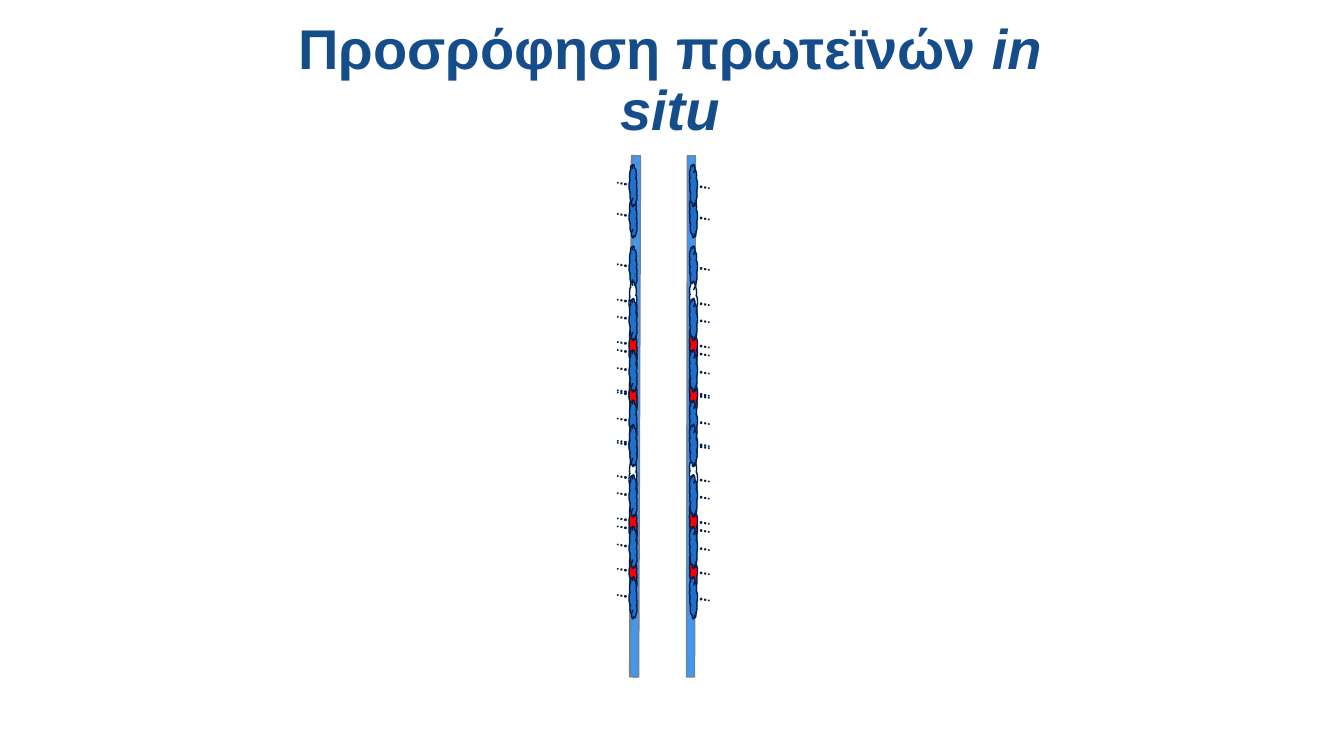
"""Build the slide on protein adsorption in situ."""
from pptx import Presentation
from pptx.dml.color import RGBColor
from pptx.enum.shapes import MSO_SHAPE
from pptx.enum.text import MSO_ANCHOR, MSO_AUTO_SIZE, PP_ALIGN
from pptx.util import Pt

RECTANGLE = MSO_SHAPE.RECTANGLE
CLOUD = MSO_SHAPE.CLOUD_CALLOUT
MIDDLE = MSO_ANCHOR.MIDDLE
NO_AUTOFIT = MSO_AUTO_SIZE.NONE
CENTER = PP_ALIGN.CENTER

COLORS = {
    "title": "154C8A",
    "membrane": "4397EE",
    "membrane_line": "748394",
    "protein_line": "001F46",
    "blue": "2170CC",
    "white": "FFFFFF",
    "red": "FF0000",
}
THICKNESS = 5.76
MEMBRANE_LENGTH, MEMBRANE_TOP = 372.24, 294.48
PROTEIN_LENGTH = 30.24
TAIL = (-0.062, 1.896)
PROTEINS = [
    ("blue", (277.92, 313.92, 187.92, 151.92)),
    ("white", (339.12, 375.12, 249.12, 213.12)),
    ("red", (369.36, 405.36, 279.36, 243.36)),
    ("blue", (388.08, 424.08, 298.08, 262.08)),
    ("blue", (129.6, 315.36, 351.36, 225.36)),
]
WALLS = [
    {"turn": 270.1, "membranes": (307.44,), "proteins": 480.24},
    {"turn": 90.2, "membranes": (267.12, 267.84), "proteins": 437.04},
]


class SlideBuilder:
    """Hold the style and the current slide."""

    def __init__(self, deck, font="Arial"):
        """Add a slide with a title to the deck."""
        self.slide = deck.slides.add_slide(deck.slide_layouts[5])
        self.font = font

    def title(self, left, top, width, height, spans, size):
        """Place the title from pairs of wording and italic flag."""
        box = self.slide.shapes.title
        box.left, box.top, box.width, box.height = map(Pt, (left, top, width, height))
        frame = box.text_frame
        frame.word_wrap = True
        frame.auto_size = NO_AUTOFIT
        frame.vertical_anchor = MIDDLE
        para = frame.paragraphs[0]
        para.alignment = CENTER
        para.line_spacing = 0.9
        para.space_before = Pt(0)
        for wording, italic in spans:
            span = para.add_run()
            span.text = wording
            span.font.name = self.font
            span.font.size = Pt(size)
            span.font.bold = True
            span.font.italic = italic
            span.font.color.rgb = RGBColor.from_string(COLORS["title"])

    def strip(self, group, kind, left, top, length, turn, fill, line):
        """Add one thin turned shape to a group."""
        shape = group.shapes.add_shape(kind, Pt(left), Pt(top), Pt(length), Pt(THICKNESS))
        shape.rotation = turn
        shape.shadow.inherit = False
        shape.fill.solid()
        shape.fill.fore_color.rgb = RGBColor.from_string(COLORS[fill])
        shape.line.color.rgb = RGBColor.from_string(COLORS[line])
        shape.line.width = Pt(1)
        return shape

    def wall(self, turn, membranes, proteins):
        """Add a membrane wall with its adsorbed proteins."""
        group = self.slide.shapes.add_group_shape()
        for left in membranes:
            self.strip(group, RECTANGLE, left, MEMBRANE_TOP, MEMBRANE_LENGTH,
                       turn, "membrane", "membrane_line")
        for fill, tops in PROTEINS:
            for top in tops:
                cloud = self.strip(group, CLOUD, proteins, top, PROTEIN_LENGTH,
                                   turn, fill, "protein_line")
                cloud.adjustments[0], cloud.adjustments[1] = TAIL


def main():
    """Build and save the deck."""
    deck = Presentation()
    deck.slide_width, deck.slide_height = Pt(960), Pt(540)
    page = SlideBuilder(deck)
    page.title(181.44, 7.2, 594, 102.24,
               [("Προσρόφηση πρωτεϊνών ", False), ("in situ", True)], 40)
    for wall in WALLS:
        page.wall(**wall)
    deck.save("out.pptx")


if __name__ == "__main__":
    main()
